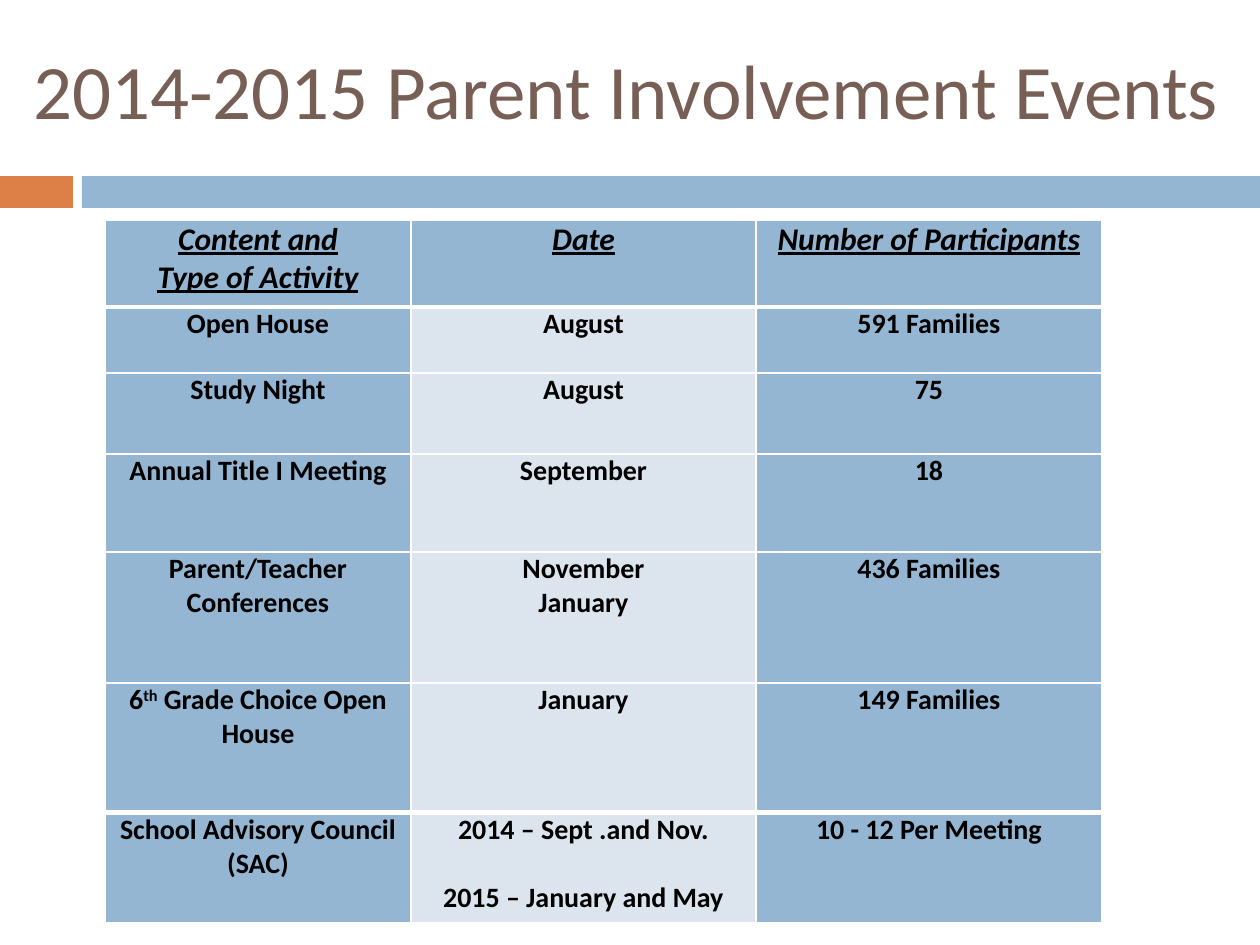
from lxml import etree
from pptx import Presentation
from pptx.dml.color import RGBColor
from pptx.enum.shapes import MSO_SHAPE
from pptx.enum.text import MSO_ANCHOR, PP_ALIGN
from pptx.oxml.ns import qn
from pptx.util import Pt

SCALE = 914400 / 126
RECTANGLE = MSO_SHAPE.RECTANGLE
MIDDLE = MSO_ANCHOR.MIDDLE
CENTER = PP_ALIGN.CENTER
LEFT = PP_ALIGN.LEFT
COLORS = {
    "orange": "DD8047",
    "blue": "94B6D2",
    "pale": "DCE5EE",
    "brown": "775F55",
    "black": "000000",
    "white": "FFFFFF",
}
TITLE_FORMAT = {"name": "Calibri", "size": Pt(44)}
BODY_FORMAT = {"name": "Calibri", "size": Pt(16), "bold": True}
HEADER_FORMAT = {**BODY_FORMAT, "size": Pt(18), "italic": True, "underline": True}
COLUMN_WIDTHS = [306, 345, 346]
ROW_HEIGHTS = [87, 66, 81, 98, 131, 130, 110]
COLUMN_FILLS = ["blue", "pale", "blue"]
LINE_GAP = Pt(19.5)
EVENTS = [
    [["Content and", "Type of Activity"], ["Date"], ["Number of Participants"]],
    [["Open House"], ["August"], ["591 Families"]],
    [["Study Night"], ["August"], ["75"]],
    [["Annual Title I Meeting"], ["September"], ["18"]],
    [["Parent/Teacher Conferences"], ["November", "January"], ["436 Families"]],
    [["6^th^ Grade Choice Open House"], ["January"], ["149 Families"]],
    [["School Advisory Council (SAC)"],
     ["2014 – Sept .and Nov.", "2015 – January and May"],
     ["10 - 12 Per Meeting"]],
]


def px(length):
    """Turn pixels into EMU."""
    return round(length * SCALE)


def rgb(name):
    """Look up a colour by name."""
    return RGBColor.from_string(COLORS[name])


def write_para(para, text, formats, color, align):
    """Fill a paragraph, raising the parts between carets."""
    para.alignment = align
    for index, part in enumerate(text.split("^")):
        span = para.add_run()
        span.text = part
        for key, value in formats.items():
            setattr(span.font, key, value)
        span.font.color.rgb = rgb(color)
        if index % 2:
            span._r.get_or_add_rPr().set("baseline", "30000")


def add_bar(page, left, width, color):
    """Draw one piece of the band below the title."""
    bar = page.shapes.add_shape(RECTANGLE, px(left), px(176), px(width), px(32))
    bar.shadow.inherit = False
    bar.fill.solid()
    bar.fill.fore_color.rgb = rgb(color)
    bar.line.fill.background()


def add_title(page, text):
    """Place the slide title."""
    box = page.shapes.add_textbox(px(21), px(10), px(1218), px(158))
    box.text_frame.word_wrap = True
    box.text_frame.vertical_anchor = MIDDLE
    write_para(box.text_frame.paragraphs[0], text, TITLE_FORMAT, "brown", LEFT)


def set_borders(cell, top, bottom):
    """Give a cell white borders with the given top and bottom widths."""
    properties = cell._tc.get_or_add_tcPr()
    widths = {"a:lnL": 1, "a:lnR": 1, "a:lnT": top, "a:lnB": bottom}
    for index, (tag, width) in enumerate(widths.items()):
        line = etree.Element(qn(tag), w=str(Pt(width)))
        fill = etree.SubElement(line, qn("a:solidFill"))
        etree.SubElement(fill, qn("a:srgbClr"), val=COLORS["white"])
        properties.insert(index, line)


def fill_cell(cell, lines, formats, fill, gap):
    """Write the lines of a cell and colour it."""
    margins = {"margin_left": px(5), "margin_right": px(5),
               "margin_top": 0, "margin_bottom": 0}
    for key, value in margins.items():
        setattr(cell, key, value)
    cell.fill.solid()
    cell.fill.fore_color.rgb = rgb(fill)
    frame = cell.text_frame
    for index, text in enumerate(lines):
        para = frame.add_paragraph() if index else frame.paragraphs[0]
        para.space_before = gap if index else 0
        write_para(para, text, formats, "black", CENTER)


def add_events_table(page):
    """Build the table of events."""
    table = page.shapes.add_table(
        len(EVENTS), len(COLUMN_WIDTHS), px(105), px(220),
        px(sum(COLUMN_WIDTHS)), px(sum(ROW_HEIGHTS))).table
    table.first_row = False
    table.horz_banding = False
    for column, width in zip(table.columns, COLUMN_WIDTHS):
        column.width = px(width)
    last = len(EVENTS) - 1
    for index, event in enumerate(EVENTS):
        table.rows[index].height = px(ROW_HEIGHTS[index])
        formats = BODY_FORMAT if index else HEADER_FORMAT
        top = 3 if index in (1, last) else 1
        bottom = 3 if index in (0, last - 1) else 1
        gap = LINE_GAP if index == last else 0
        for column, lines in enumerate(event):
            cell = table.cell(index, column)
            fill = COLUMN_FILLS[column] if index else "blue"
            fill_cell(cell, lines, formats, fill, gap)
            set_borders(cell, top, bottom)


def main():
    """Build and save the slide."""
    deck = Presentation()
    deck.slide_width = px(1260)
    deck.slide_height = px(945)
    page = deck.slides.add_slide(deck.slide_layouts[6])
    add_bar(page, 0, 73, "orange")
    add_bar(page, 82, 1178, "blue")
    add_title(page, "2014-2015 Parent Involvement Events")
    add_events_table(page)
    deck.save("out.pptx")


if __name__ == "__main__":
    main()
